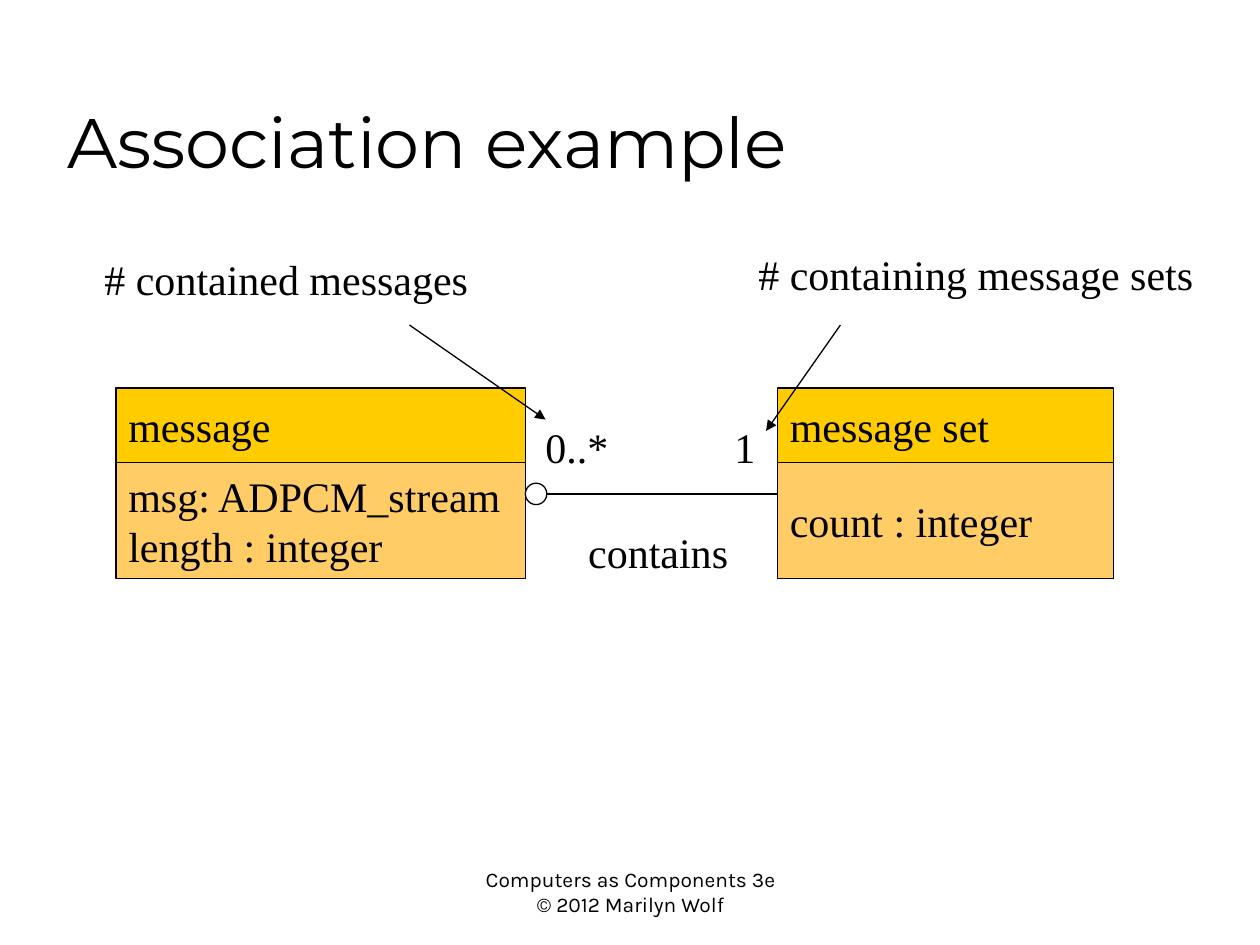
"""Build the slide showing an association between two UML classes."""
import pptx
import pptx.dml.color
import pptx.enum.shapes
import pptx.enum.text
import pptx.oxml
import pptx.oxml.ns
import pptx.util

Inches = pptx.util.Inches
Pt = pptx.util.Pt
RGBColor = pptx.dml.color.RGBColor
SHAPE = pptx.enum.shapes.MSO_SHAPE
ANCHOR = pptx.enum.text.MSO_ANCHOR
ALIGN = pptx.enum.text.PP_ALIGN

BLACK = RGBColor(0x00, 0x00, 0x00)
WHITE = RGBColor(0xFF, 0xFF, 0xFF)
GOLD = RGBColor(0xFF, 0xCC, 0x00)
ORANGE = RGBColor(0xFF, 0xCC, 0x66)

BODY = {"name": "Times New Roman", "size": Pt(24)}
TITLE = {"name": "Montserrat", "size": Pt(40)}
FOOTER = {"name": "Karla", "size": Pt(12)}

CLASS_TOP, NAME_HEIGHT, FIELDS_HEIGHT = 3.08, 0.59, 0.92
CLASSES = [
    (0.92, 3.25, ["message"], ["msg: ADPCM_stream", "length : integer"]),
    (6.17, 2.67, ["message set"], ["count : integer"]),
]
LABELS = [
    ("0..*", 4.23, 3.3, 0.7),
    ("1", 5.73, 3.3, 0.37),
    ("contains", 4.57, 4.13, 1.31),
    ("# contained messages", 0.73, 1.96, 3.09),
    ("# containing message sets", 5.92, 1.92, 3.65),
]
LABEL_HEIGHT = 0.5
ASSOCIATION_Y, RING = 3.92, 0.17
ARROWS = [(3.25, 2.58, 4.33, 3.33), (6.67, 2.58, 6.08, 3.42)]


def write(sp, lines, font, wrap=False, anchor=ANCHOR.TOP, align=ALIGN.LEFT):
    tf = sp.text_frame
    tf.word_wrap, tf.vertical_anchor = wrap, anchor
    for i, line in enumerate(lines):
        p = tf.paragraphs[0] if i == 0 else tf.add_paragraph()
        p.alignment = align
        r = p.add_run()
        r.text = line
        r.font.color.rgb = BLACK
        for key, value in font.items():
            setattr(r.font, key, value)


def add_text(s, box, lines, font, **options):
    write(s.shapes.add_textbox(*map(Inches, box)), lines, font, **options)


def add_outlined(s, kind, box, fill):
    sp = s.shapes.add_shape(kind, *map(Inches, box))
    sp.shadow.inherit = False
    sp.fill.solid()
    sp.fill.fore_color.rgb = fill
    sp.line.color.rgb = BLACK
    sp.line.width = Pt(0.75)
    return sp


def add_line(s, ends, arrow=False):
    kind = pptx.enum.shapes.MSO_CONNECTOR.STRAIGHT
    sp = s.shapes.add_connector(kind, *map(Inches, ends))
    sp.line.color.rgb = BLACK
    sp.line.width = Pt(0.75)
    if arrow:
        tail = pptx.oxml.parse_xml(
            f'<a:tailEnd {pptx.oxml.ns.nsdecls("a")} type="triangle"/>')
        sp.line._get_or_add_ln().append(tail)
    sp._element.spPr.append(
        pptx.oxml.parse_xml(f'<a:effectLst {pptx.oxml.ns.nsdecls("a")}/>'))


def main():
    prs = pptx.Presentation()
    prs.slide_width, prs.slide_height = Inches(10), Inches(7.5)
    s = prs.slides.add_slide(prs.slide_layouts[6])

    add_text(s, (3.67, 6.83, 2.67, 0.5),
             ["Computers as Components 3e", "© 2012 Marilyn Wolf"],
             FOOTER, wrap=True, align=ALIGN.CENTER)
    add_text(s, (0.44, 0.25, 8.5, 1.25), ["Association example"],
             TITLE, wrap=True, anchor=ANCHOR.BOTTOM)

    for left, width, name, fields in CLASSES:
        top = CLASS_TOP
        for lines, height, fill in ((name, NAME_HEIGHT, GOLD),
                                    (fields, FIELDS_HEIGHT, ORANGE)):
            sp = add_outlined(s, SHAPE.RECTANGLE, (left, top, width, height), fill)
            write(sp, lines, BODY, anchor=ANCHOR.MIDDLE)
            top += height

    start, end = CLASSES[0][0] + CLASSES[0][1], CLASSES[1][0]
    add_line(s, (start, ASSOCIATION_Y, end, ASSOCIATION_Y))
    add_outlined(s, SHAPE.OVAL, (start, ASSOCIATION_Y - RING / 2, RING, RING), WHITE)

    for text, left, top, width in LABELS:
        add_text(s, (left, top, width, LABEL_HEIGHT), [text], BODY)
    for ends in ARROWS:
        add_line(s, ends, arrow=True)

    prs.save("out.pptx")


if __name__ == "__main__":
    main()
